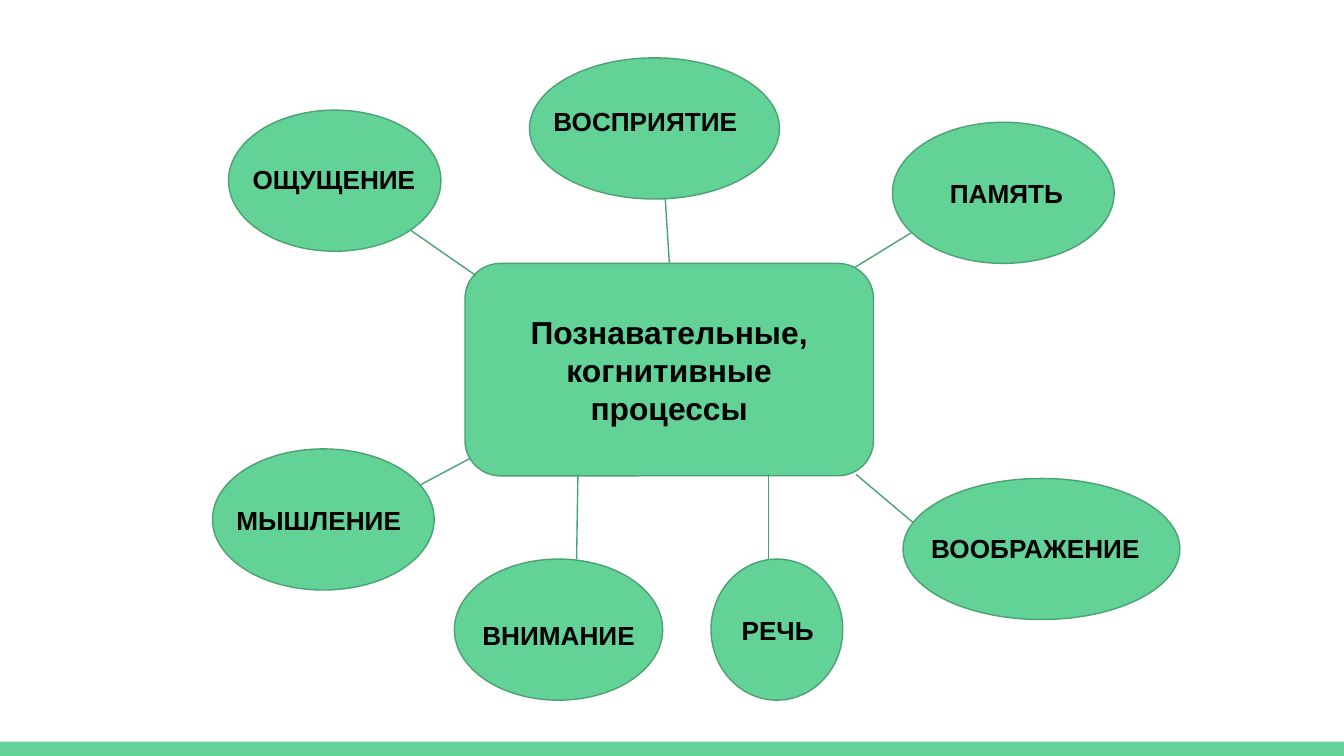
from dataclasses import dataclass

from lxml import etree
from pptx import Presentation
from pptx.dml.color import RGBColor
from pptx.enum import shapes, text
from pptx.oxml import ns
from pptx.util import Pt

GREEN = RGBColor(0x63, 0xD2, 0x97)
DARK_GREEN = RGBColor(0x4B, 0xA1, 0x73)
BLACK = RGBColor(0, 0, 0)
FONT = "Arial"
INSET = 7.2
OUTLINE_WIDTH = 0.75
OVAL_HEIGHT = 75.6
LABEL_HEIGHT = 31.7


@dataclass
class Process:
    """One oval with its label and its line to the centre, in points."""
    name: str
    oval: tuple[float, float, float]   # left, top, width
    label: tuple[float, float, float]  # left, top, width
    line_start: tuple[float, float]
    line_end: tuple[float, float]


PROCESSES = [
    Process("ОЩУЩЕНИЕ", (122.4, 59, 113.8), (128.2, 80.6, 137.5),
            (254.9, 147.6), (219.6, 123.1)),
    Process("ВОСПРИЯТИЕ", (283.7, 31, 133.9), (289.4, 49, 148.3),
            (358.6, 141.1), (356.4, 106.6)),
    Process("ПАМЯТЬ", (478.1, 65.5, 118.8), (501.8, 87.8, 111.6),
            (457.9, 143.3), (489.6, 123.8)),
    Process("ВООБРАЖЕНИЕ", (483.8, 256.3, 148.3), (491.8, 277.9, 153.4),
            (458.6, 254.2), (491.8, 282.2)),
    Process("РЕЧЬ", (380.9, 299.5, 70.6), (390.2, 321.8, 111.6),
            (411.8, 254.2), (411.8, 300.2)),
    Process("ВНИМАНИЕ", (243.4, 299.5, 111.6), (251.3, 324.7, 125.3),
            (309.6, 254.2), (308.9, 299.5)),
    Process("МЫШЛЕНИЕ", (113.8, 240.5, 118.8), (119.5, 262.8, 129.6),
            (252, 245.5), (218.2, 263.5)),
]


def add_green_shape(slide, kind, left: float, top: float, width: float,
                    height: float, outlined: bool = True):
    shape = slide.shapes.add_shape(kind, Pt(left), Pt(top), Pt(width), Pt(height))
    shape.shadow.inherit = False
    shape.fill.solid()
    shape.fill.fore_color.rgb = GREEN
    if outlined:
        shape.line.color.rgb = DARK_GREEN
        shape.line.width = Pt(OUTLINE_WIDTH)
    else:
        shape.line.fill.background()
    return shape


def write_text(shape, lines: list[str], size: float, alignment) -> None:
    frame = shape.text_frame
    frame.word_wrap = True
    frame.margin_left = frame.margin_right = Pt(INSET)
    frame.margin_top = frame.margin_bottom = Pt(INSET)
    frame.text = "\n".join(lines)
    for paragraph in frame.paragraphs:
        paragraph.alignment = alignment
        paragraph.font.name = FONT
        paragraph.font.size = Pt(size)
        paragraph.font.bold = True
        paragraph.font.color.rgb = BLACK


def add_line(slide, process: Process) -> None:
    ends = [Pt(value) for value in process.line_start + process.line_end]
    line = slide.shapes.add_connector(shapes.MSO_CONNECTOR.STRAIGHT, *ends)
    line.line.color.rgb = DARK_GREEN
    line.line.width = Pt(OUTLINE_WIDTH)
    etree.SubElement(line._element.spPr, ns.qn("a:effectLst"))


def add_label(slide, process: Process) -> None:
    left, top, width = process.label
    label = slide.shapes.add_textbox(Pt(left), Pt(top), Pt(width), Pt(LABEL_HEIGHT))
    write_text(label, [process.name], 14, text.PP_ALIGN.LEFT)
    label.text_frame.auto_size = text.MSO_AUTO_SIZE.SHAPE_TO_FIT_TEXT


def main() -> None:
    presentation = Presentation()
    presentation.slide_width = Pt(720)
    presentation.slide_height = Pt(405)
    slide = presentation.slides.add_slide(presentation.slide_layouts[6])

    # Bottom bar
    add_green_shape(slide, shapes.MSO_SHAPE.RECTANGLE, 0, 397.4, 720, 7.6,
                    outlined=False)

    # Central topic
    centre = add_green_shape(slide, shapes.MSO_SHAPE.FLOWCHART_ALTERNATE_PROCESS,
                             249.1, 141.1, 218.9, 113.8)
    write_text(centre, ["Познавательные,", "когнитивные процессы"], 17,
               text.PP_ALIGN.CENTER)
    centre.text_frame.vertical_anchor = text.MSO_ANCHOR.MIDDLE

    # Lines lie behind the ovals, labels on top
    for process in PROCESSES:
        add_line(slide, process)
    for process in PROCESSES:
        add_green_shape(slide, shapes.MSO_SHAPE.OVAL, *process.oval, OVAL_HEIGHT)
    for process in PROCESSES:
        add_label(slide, process)

    presentation.save("out.pptx")


if __name__ == "__main__":
    main()
